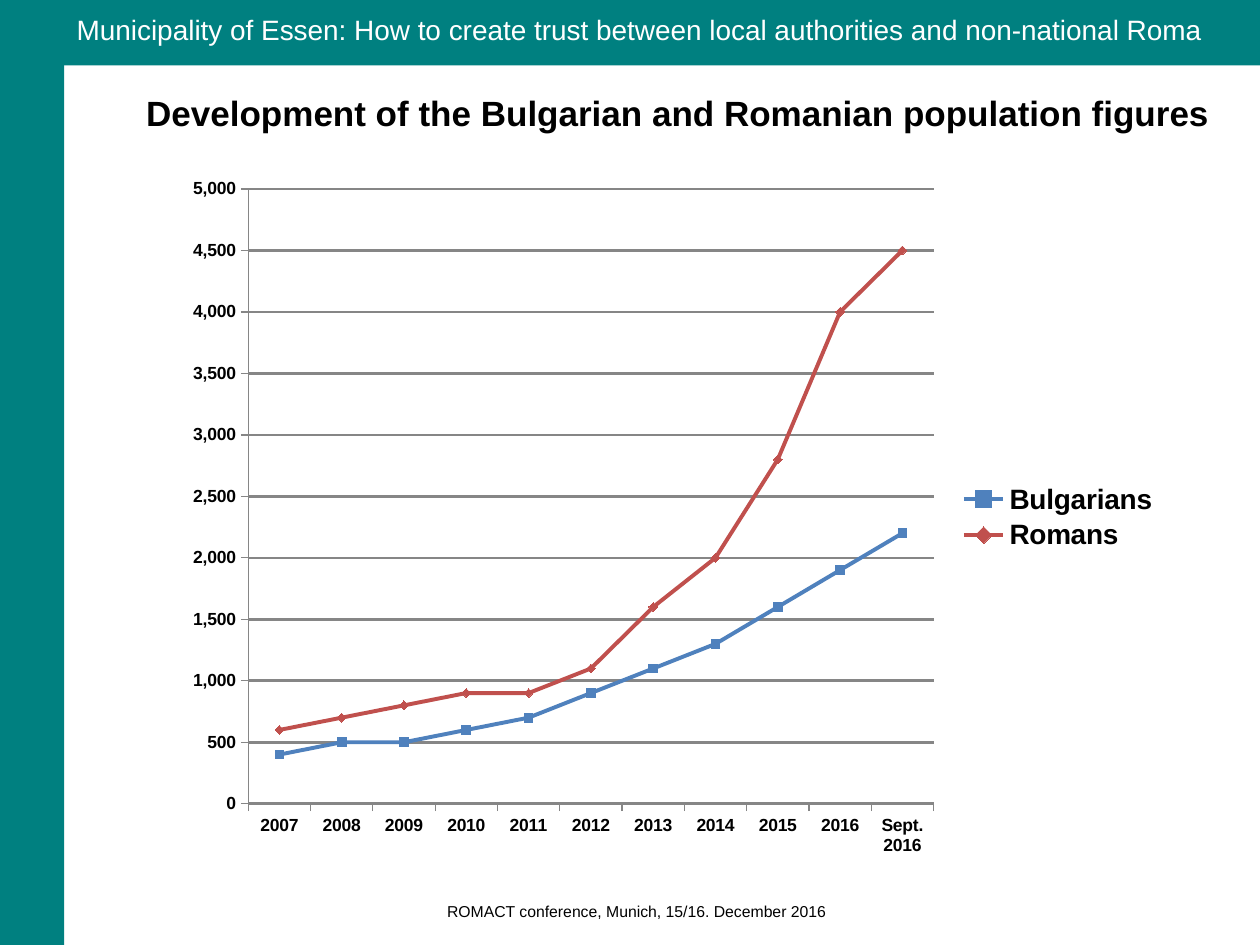
from lxml.etree import SubElement
from pptx import Presentation
from pptx.chart.data import CategoryChartData
from pptx.dml.color import RGBColor
from pptx.enum.chart import XL_CHART_TYPE, XL_LEGEND_POSITION, XL_MARKER_STYLE, XL_TICK_MARK
from pptx.enum.shapes import MSO_SHAPE
from pptx.enum.text import MSO_ANCHOR, PP_ALIGN
from pptx.oxml.ns import qn
from pptx.util import Inches, Pt

# Content
TITLE = "Development of the Bulgarian and Romanian population figures"
HEADER = ("Municipality of Essen: How to create trust between "
          "local authorities and non-national Roma")
FOOTER = "ROMACT conference, Munich, 15/16. December 2016"
YEARS = [str(year) for year in range(2007, 2017)] + ["Sept. 2016"]
SERIES = [
    ("Bulgarians", "4F81BD", XL_MARKER_STYLE.SQUARE,
     [400, 500, 500, 600, 700, 900, 1100, 1300, 1600, 1900, 2200]),
    ("Romans", "C0504D", XL_MARKER_STYLE.DIAMOND,
     [600, 700, 800, 900, 900, 1100, 1600, 2000, 2800, 4000, 4500]),
]
TEAL, WHITE, BLACK, GRAY = "008080", "FFFFFF", "000000", "868686"
BANDS = [(0, 0, 0.51, 7.5), (0, 0, 10, 0.52)]
CHART_BOX = (1.38, 1.31, 7.92, 5.59)
PLOT_BOX = (1.97, 1.5, 5.44, 4.88)


def rgb(value):
    return RGBColor.from_string(value)


def set_font(font, size, color=BLACK, bold=False):
    font.name, font.size, font.bold = "Arial", Pt(size), bold
    font.color.rgb = rgb(color)


def set_line(line, color, width):
    line.color.rgb = rgb(color)
    line.width = Pt(width)


def write(sp, box, text, size, color=BLACK, bold=False, align=PP_ALIGN.LEFT):
    sp.left, sp.top, sp.width, sp.height = map(Inches, box)
    tf = sp.text_frame
    tf.word_wrap = True
    tf.vertical_anchor = MSO_ANCHOR.TOP
    p = tf.paragraphs[0]
    p.alignment = align
    r = p.add_run()
    r.text = text
    set_font(r.font, size, color, bold)


prs = Presentation()
prs.slide_width, prs.slide_height = Inches(10), Inches(7.5)
s = prs.slides.add_slide(prs.slide_layouts[5])

# Teal bands
for box in BANDS:
    sp = s.shapes.add_shape(MSO_SHAPE.RECTANGLE, *map(Inches, box))
    sp.shadow.inherit = False
    sp.fill.solid()
    sp.fill.fore_color.rgb = rgb(TEAL)
    sp.line.fill.background()

# Header, title and footer
write(s.shapes.add_textbox(0, 0, 0, 0), (0.51, 0.05, 9.45, 0.67), HEADER, 16, WHITE)
write(s.shapes.title, (1.06, 0.68, 8.74, 0.44), TITLE, 20, bold=True,
      align=PP_ALIGN.LEFT)
write(s.shapes.add_textbox(0, 0, 0, 0), (3.45, 7.11, 3.31, 0.25), FOOTER, 9)

# Line chart
data = CategoryChartData(number_format="#,##0")
data.categories = YEARS
for name, _, _, values in SERIES:
    data.add_series(name, values)
chart = s.shapes.add_chart(XL_CHART_TYPE.LINE_MARKERS,
                           *map(Inches, CHART_BOX), data).chart
set_font(chart.font, 10)
chart.has_title = False
plot = chart.plots[0]
plot.vary_by_categories = False

for series, (_, color, marker, _) in zip(plot.series, SERIES):
    series.smooth = False
    set_line(series.format.line, color, 2.25)
    series.marker.style = marker
    series.marker.size = 5
    series.marker.format.fill.solid()
    series.marker.format.fill.fore_color.rgb = rgb(color)
    set_line(series.marker.format.line, color, 0.75)

# Axes
for axis in (chart.category_axis, chart.value_axis):
    axis.major_tick_mark = XL_TICK_MARK.OUTSIDE
    axis.minor_tick_mark = XL_TICK_MARK.NONE
    set_line(axis.format.line, GRAY, 0.75)
    set_font(axis.tick_labels.font, 10, bold=True)
axis = chart.value_axis
axis.minimum_scale, axis.maximum_scale, axis.major_unit = 0, 5000, 500
axis.tick_labels.number_format = "#,##0"
axis.tick_labels.number_format_is_linked = False
axis.has_major_gridlines = True
set_line(axis.major_gridlines.format.line, GRAY, 1.5)

# Legend
chart.has_legend = True
chart.legend.position = XL_LEGEND_POSITION.RIGHT
chart.legend.include_in_layout = False
set_font(chart.legend.font, 16, bold=True)

# Fixed inner plot area, as fractions of the chart frame
area = chart.element.find(".//" + qn("c:plotArea"))
layout = area.find(qn("c:layout"))
if layout is None:
    layout = SubElement(area, qn("c:layout"))
    area.insert(0, layout)
manual = SubElement(layout, qn("c:manualLayout"))
left, top, width, height = CHART_BOX
x, y, w, h = PLOT_BOX
for tag, value in [("layoutTarget", "inner"), ("xMode", "edge"), ("yMode", "edge"),
                   ("x", (x - left) / width), ("y", (y - top) / height),
                   ("w", w / width), ("h", h / height)]:
    SubElement(manual, qn("c:" + tag)).set("val", str(value))

prs.save("out.pptx")
